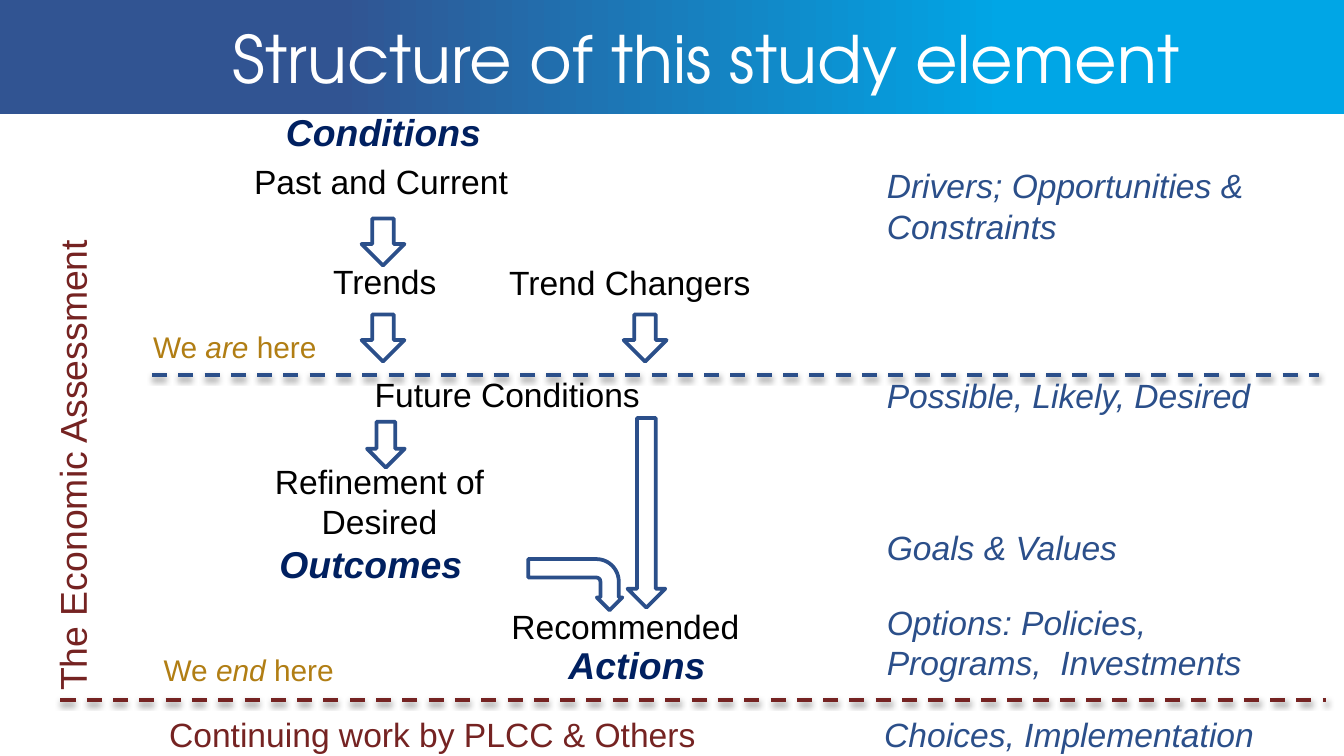
from lxml import etree
from pptx import Presentation
from pptx.dml.color import RGBColor
from pptx.enum.dml import MSO_LINE
from pptx.enum.shapes import MSO_CONNECTOR, MSO_SHAPE
from pptx.enum.text import MSO_ANCHOR, MSO_AUTO_SIZE, PP_ALIGN
from pptx.oxml import parse_xml
from pptx.oxml.ns import nsdecls, qn
from pptx.util import Pt

RECT = MSO_SHAPE.RECTANGLE
DOWN_ARROW = MSO_SHAPE.DOWN_ARROW
BENT_ARROW = MSO_SHAPE.BENT_ARROW
STRAIGHT = MSO_CONNECTOR.STRAIGHT
DASH = MSO_LINE.DASH
MIDDLE = MSO_ANCHOR.MIDDLE
GROW = MSO_AUTO_SIZE.SHAPE_TO_FIT_TEXT
LEFT = PP_ALIGN.LEFT
CENTER = PP_ALIGN.CENTER

BLUE = "2B4F8A"
NAVY = "002060"
MAROON = "752322"
GOLD = "B17E14"
BLACK = "000000"
WHITE = "FFFFFF"
SKY = "00A6E6"
INDIGO = "315492"


def color(hex_text):
    return RGBColor.from_string(hex_text)


def add_run(p, text, size, hex_text, bold=False, italic=False, font="Arial"):
    r = p.add_run()
    r.text = text
    r.font.name = font
    r.font.size = Pt(size)
    r.font.bold = bold
    r.font.italic = italic
    r.font.color.rgb = color(hex_text)


def add_label(s, x, y, w, h, align=LEFT):
    sp = s.shapes.add_textbox(Pt(x), Pt(y), Pt(w), Pt(h))
    tf = sp.text_frame
    tf.word_wrap = True
    tf.auto_size = GROW
    p = tf.paragraphs[0]
    p.alignment = align
    return sp, p


def add_arrow(s, kind, x, y, w, h):
    sp = s.shapes.add_shape(kind, Pt(x), Pt(y), Pt(w), Pt(h))
    sp.shadow.inherit = False
    sp.fill.solid()
    sp.fill.fore_color.rgb = color(WHITE)
    sp.line.color.rgb = color(BLUE)
    sp.line.width = Pt(2)
    return sp


def add_divider(s, x, y, w, hex_text):
    line = s.shapes.add_connector(STRAIGHT, Pt(x), Pt(y), Pt(x + w), Pt(y))
    line.line.color.rgb = color(hex_text)
    line.line.width = Pt(2)
    line.line.dash_style = DASH
    effects = parse_xml(f"<a:effectLst {nsdecls('a')}/>")
    shadow = etree.SubElement(effects, qn("a:outerShdw"), blurRad=str(Pt(3.1)),
                              dist=str(Pt(1.6)), dir="5400000", rotWithShape="0")
    shade = etree.SubElement(shadow, qn("a:srgbClr"), val=BLACK)
    etree.SubElement(shade, qn("a:alpha"), val="38000")
    line._element.spPr.append(effects)


def add_header(s, x, y, w, h):
    band = s.shapes.add_shape(RECT, Pt(x), Pt(y), Pt(w), Pt(h))
    band.shadow.inherit = False
    band.line.fill.background()
    band.fill.gradient()
    band.fill.gradient_angle = 0
    stops = [(0.25, INDIGO), (0.75, SKY)]
    for stop, (position, hex_text) in zip(band.fill.gradient_stops, stops):
        stop.position = position
        stop.color.rgb = color(hex_text)
    title = s.shapes.add_textbox(Pt(x + 72.7), Pt(y), Pt(w - 108.7), Pt(h))
    tf = title.text_frame
    tf.word_wrap = True
    tf.vertical_anchor = MIDDLE
    tf.margin_left = tf.margin_right = Pt(6)
    tf.margin_top = tf.margin_bottom = Pt(3)
    p = tf.paragraphs[0]
    p.alignment = CENTER
    add_run(p, "Structure of this study element", 35, WHITE, font="TeX Gyre Adventor")


def add_flow(s, x, y):
    headings = [
        ("Conditions", 0, 0, 159, CENTER),
        ("Outcomes", 16.6, 231.6, 143, LEFT),
        ("Actions", 171.4, 285.6, 99, LEFT),
    ]
    for text, dx, dy, w, align in headings:
        sp, p = add_label(s, x + dx, y + dy, w, 31.5, align)
        add_run(p, text, 20, NAVY, bold=True, italic=True)
    steps = [
        ("Past and Current", 3, 27.6, 159, 29, LEFT),
        ("Trends", 45.4, 81, 74, 29, LEFT),
        ("Trend Changers", 139.7, 81.8, 174, 29, LEFT),
        ("Future Conditions", 67.7, 141.6, 235, 29, LEFT),
        ("Refinement of Desired", 5.8, 188.4, 143, 51, CENTER),
        ("Recommended", 137.5, 266, 143, 29, CENTER),
    ]
    for text, dx, dy, w, h, align in steps:
        sp, p = add_label(s, x + dx, y + dy, w, h, align)
        add_run(p, text, 18, BLACK)
    arrows = [
        (67.7, 62, 23, 25.2),
        (67.7, 113.5, 23, 25.2),
        (208.1, 113.5, 23, 25.2),
        (70.6, 171, 20.2, 24.5),
        (210.2, 169, 20.2, 101.5),
    ]
    for dx, dy, w, h in arrows:
        add_arrow(s, DOWN_ARROW, x + dx, y + dy, w, h)
    bend = add_arrow(s, BENT_ARROW, x + 168.5, y + 233, 27.4, 50.4)
    bend.rotation = 90
    for i, value in enumerate([0.36, 0.25, 0.25, 0.44]):
        bend.adjustments[i] = value


def add_annotations(s, x, y):
    notes = [
        ("Drivers; Opportunities & Constraints", 0, 0, 214.6, 51),
        ("Possible, Likely, Desired", 0, 112.3, 214.6, 29),
        ("Goals & Values", 0, 193.5, 150.5, 29),
        ("Options: Policies, Programs,  Investments", 0, 234, 226, 51),
        ("Choices, Implementation", -1.4, 293.7, 214.6, 29),
    ]
    for text, dx, dy, w, h in notes:
        sp, p = add_label(s, x + dx, y + dy, w, h)
        add_run(p, text, 18, BLUE, italic=True)


def add_sidebar(s, x, y, w, h):
    sp, p = add_label(s, x + (w - h) / 2, y + (h - w) / 2, h, w)
    sp.rotation = 270
    add_run(p, "The Economic Assessment", 20, MAROON)


def add_milestones(s, x, y):
    add_divider(s, x + 49, y + 28, 625, BLUE)
    add_divider(s, x, y + 202.3, 678.2, MAROON)
    for verb, dx, dy in [("are", 42.5, 0), ("end", 48.2, 172.8)]:
        sp, p = add_label(s, x + dx, y + dy, 143, 26.6)
        add_run(p, "We ", 16, GOLD)
        add_run(p, verb, 16, GOLD, italic=True)
        add_run(p, " here", 16, GOLD)
    sp, p = add_label(s, x + 51.1, y + 205.9, 325.4, 29)
    add_run(p, "Continuing work by PLCC & Others", 18, MAROON)


def main():
    prs = Presentation()
    prs.slide_width = Pt(720)
    prs.slide_height = Pt(405)
    s = prs.slides.add_slide(prs.slide_layouts[6])
    add_header(s, 0, 0, 720, 61)
    add_milestones(s, 32.4, 172.8)
    add_flow(s, 126, 55)
    add_annotations(s, 468, 85)
    add_sidebar(s, 23, 92.2, 31.7, 285)
    prs.save("out.pptx")


if __name__ == "__main__":
    main()
